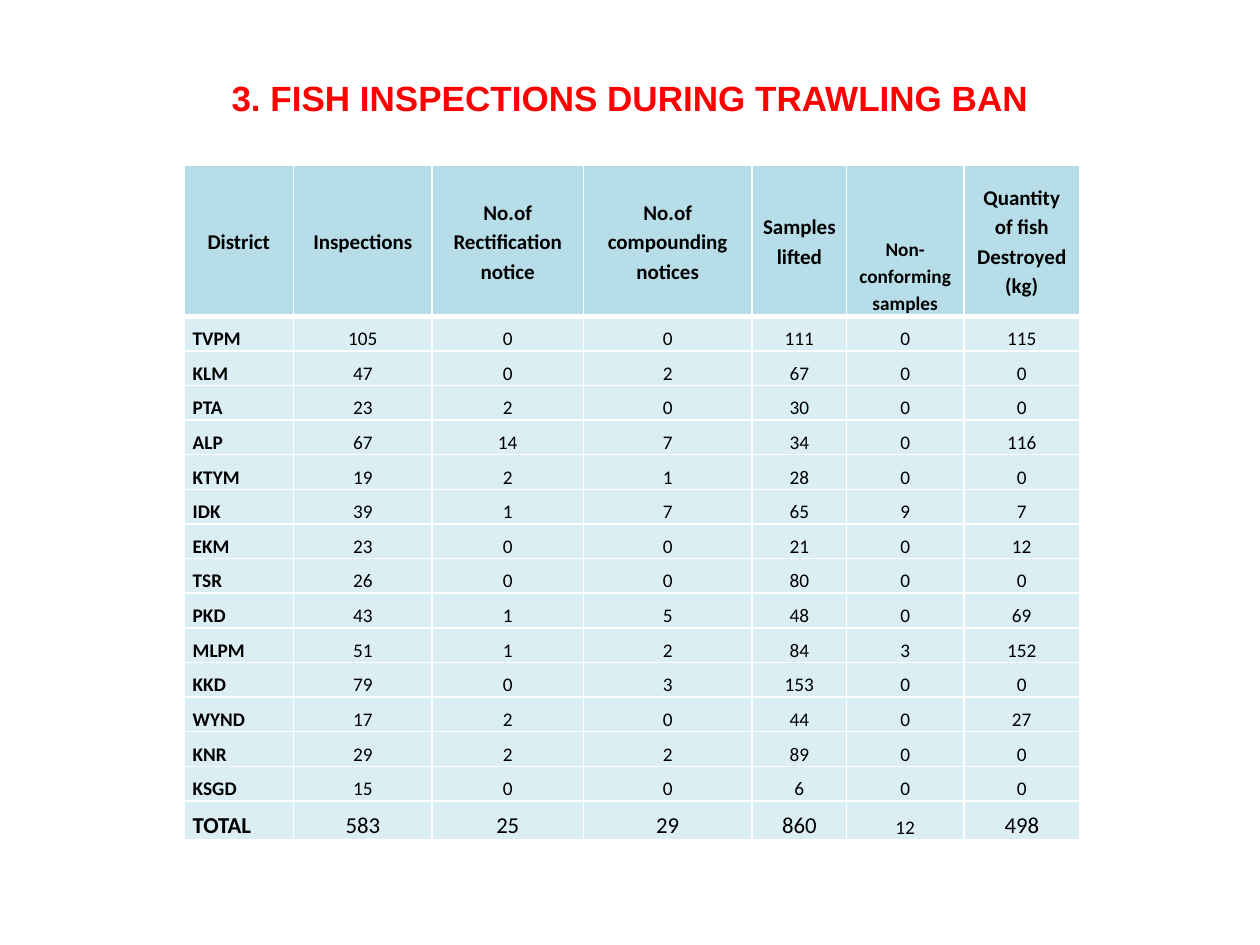
from dataclasses import dataclass

from lxml.etree import SubElement
from pptx import Presentation
from pptx.dml.color import RGBColor
from pptx.enum.text import MSO_ANCHOR, PP_ALIGN
from pptx.oxml.ns import qn
from pptx.util import Inches, Pt


@dataclass(frozen=True)
class Theme:
    title_font: str = "Arial"
    table_font: str = "Calibri"
    title_color: str = "FF0000"
    text_color: str = "000000"
    header_fill: str = "B7DEE8"
    body_fill: str = "DBEEF4"
    border_color: str = "FFFFFF"
    title_size: int = 20
    header_size: int = 12
    body_size: int = 11
    total_size: int = 13
    thin_line: int = 1
    thick_line: int = 3
    line_spacing: float = 1.15


HEADERS = ["District", "Inspections", "No.of Rectification notice",
           "No.of compounding notices", "Samples lifted",
           "Non-conforming samples", "Quantity of fish Destroyed (kg)"]
DISTRICTS = [
    ("TVPM", 105, 0, 0, 111, 0, 115),
    ("KLM", 47, 0, 2, 67, 0, 0),
    ("PTA", 23, 2, 0, 30, 0, 0),
    ("ALP", 67, 14, 7, 34, 0, 116),
    ("KTYM", 19, 2, 1, 28, 0, 0),
    ("IDK", 39, 1, 7, 65, 9, 7),
    ("EKM", 23, 0, 0, 21, 0, 12),
    ("TSR", 26, 0, 0, 80, 0, 0),
    ("PKD", 43, 1, 5, 48, 0, 69),
    ("MLPM", 51, 1, 2, 84, 3, 152),
    ("KKD", 79, 0, 3, 153, 0, 0),
    ("WYND", 17, 2, 0, 44, 0, 27),
    ("KNR", 29, 2, 2, 89, 0, 0),
    ("KSGD", 15, 0, 0, 6, 0, 0),
]
TOTALS = ("TOTAL", 583, 25, 29, 860, 12, 498)
NONCONFORMING = HEADERS.index("Non-conforming samples")

COLUMN_WIDTHS = [0.87, 1.1, 1.2, 1.34, 0.75, 0.93, 0.92]
TABLE_HEIGHT, HEADER_HEIGHT, TOTAL_HEIGHT = 5.36, 1.2, 0.31
DISTRICT_HEIGHT = (TABLE_HEIGHT - HEADER_HEIGHT - TOTAL_HEIGHT) / len(DISTRICTS)


class SlideBuilder:
    def __init__(self, slide, theme):
        self.slide = slide
        self.theme = theme

    def style(self, para, font, size, color, bold, align):
        para.alignment = align
        for span in para.runs:
            span.font.name = font
            span.font.size = Pt(size)
            span.font.bold = bold
            span.font.color.rgb = RGBColor.from_string(color)

    def title(self, text, left, top, width, height, bottom_inset):
        box = self.slide.shapes.add_textbox(
            Inches(left), Inches(top), Inches(width), Inches(height))
        frame = box.text_frame
        frame.text = text
        frame.word_wrap = True
        frame.vertical_anchor = MSO_ANCHOR.MIDDLE
        frame.margin_bottom = Inches(bottom_inset)
        self.style(frame.paragraphs[0], self.theme.title_font,
                   self.theme.title_size, self.theme.title_color, True,
                   PP_ALIGN.CENTER)

    def table(self, rows, left, top, widths, heights):
        table = self.slide.shapes.add_table(
            len(rows), len(widths), Inches(left), Inches(top),
            Inches(sum(widths)), Inches(sum(heights))).table
        table.horz_banding = False
        for column, width in zip(table.columns, widths):
            column.width = Inches(width)
        for row, height in zip(table.rows, heights):
            row.height = Inches(height)
        for row_index, values in enumerate(rows):
            for column_index, value in enumerate(values):
                self.cell(table.cell(row_index, column_index), str(value),
                          row_index, column_index, len(rows) - 1)

    def cell(self, cell, text, row, column, last_row):
        theme = self.theme
        header = row == 0
        narrow = column == NONCONFORMING
        # Text
        cell.text_frame.text = text
        cell.margin_left = cell.margin_right = Inches(0.07)
        cell.margin_top = cell.margin_bottom = 0
        cell.vertical_anchor = (MSO_ANCHOR.MIDDLE if header and not narrow
                                else MSO_ANCHOR.BOTTOM)
        size = theme.body_size
        if not narrow and header:
            size = theme.header_size
        elif not narrow and row == last_row:
            size = theme.total_size
        para = cell.text_frame.paragraphs[0]
        para.line_spacing = theme.line_spacing
        self.style(para, theme.table_font, size, theme.text_color,
                   header or column == 0,
                   PP_ALIGN.CENTER if header or column else PP_ALIGN.LEFT)
        # Borders come before the fill in the cell properties
        self.border(cell, "lnL", theme.thin_line)
        self.border(cell, "lnR", theme.thin_line)
        self.border(cell, "lnT", theme.thick_line if row == 1 else theme.thin_line)
        self.border(cell, "lnB", theme.thick_line if header else theme.thin_line)
        cell.fill.solid()
        cell.fill.fore_color.rgb = RGBColor.from_string(
            theme.header_fill if header else theme.body_fill)

    def border(self, cell, side, width):
        properties = cell._tc.get_or_add_tcPr()
        line = SubElement(properties, qn(f"a:{side}"), w=str(Pt(width)))
        fill = SubElement(line, qn("a:solidFill"))
        SubElement(fill, qn("a:srgbClr"), val=self.theme.border_color)


def main():
    deck = Presentation()
    deck.slide_width = Inches(10)
    deck.slide_height = Inches(7.5)
    slide = deck.slides.add_slide(deck.slide_layouts[6])
    builder = SlideBuilder(slide, Theme())

    # Heading
    builder.title("3. FISH INSPECTIONS DURING TRAWLING BAN",
                  0.5, 0.3, 9, 1.25, bottom_inset=0.36)

    # Inspections by district
    heights = [HEADER_HEIGHT, *[DISTRICT_HEIGHT] * len(DISTRICTS), TOTAL_HEIGHT]
    builder.table([HEADERS, *DISTRICTS, TOTALS], 1.46, 1.31,
                  COLUMN_WIDTHS, heights)

    deck.save("out.pptx")


if __name__ == "__main__":
    main()
